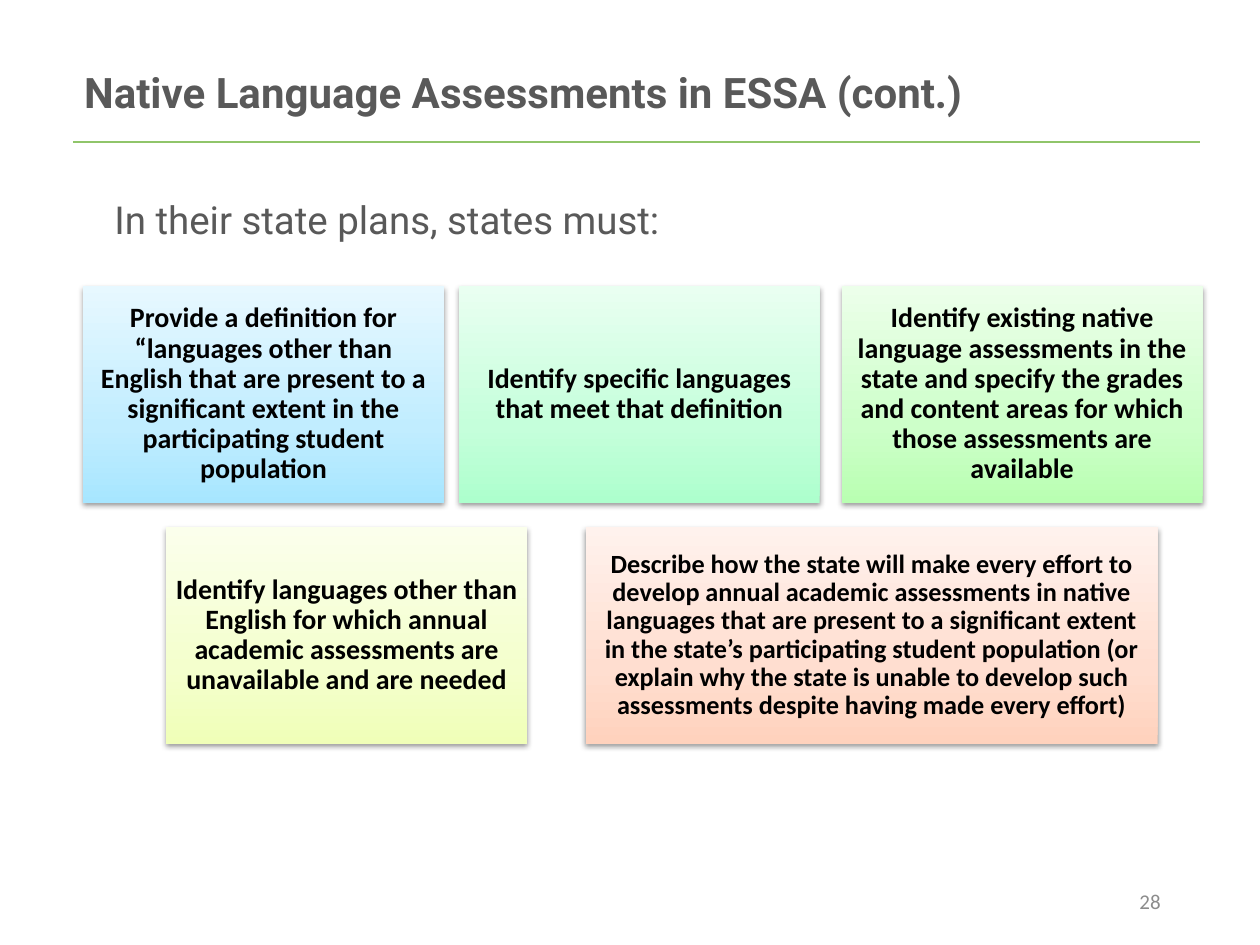
import copy

import lxml.etree
import pptx
import pptx.dml.color
import pptx.enum.dml
import pptx.enum.shapes
import pptx.enum.text
import pptx.oxml
import pptx.oxml.ns
import pptx.util

Pt = pptx.util.Pt
ALIGN = pptx.enum.text.PP_ALIGN
ANCHOR = pptx.enum.text.MSO_ANCHOR

COLOURS = {"heading": "595959", "body": "000000", "number": "8C8C8C", "rule": "90C56A"}

# Gradient stops of each card, from its bottom edge to its top edge
GRADIENTS = {
    "blue": ("A7E6FF", "C1EDFF", "E7F8FF"),
    "mint": ("ADFFCD", "C5FFDB", "E9FFF1"),
    "green": ("B9FFB2", "CDFFC9", "ECFFEA"),
    "yellow": ("F0FFB8", "F4FFCD", "FBFFEC"),
    "peach": ("FFD2BD", "FFDED0", "FFF2ED"),
}
STOPS = (0, 0.35, 1)

SHADOW = (
    '<a:outerShdw xmlns:a="http://schemas.openxmlformats.org/drawingml/2006/main" '
    'blurRad="40000" dist="20000" dir="5400000" rotWithShape="0">'
    '<a:srgbClr val="000000"><a:alpha val="38000"/></a:srgbClr></a:outerShdw>'
)


def rgb(value):
    return pptx.dml.color.RGBColor.from_string(value)


def write(frame, text, size, font="Calibri", colour="body", bold=False,
          align=ALIGN.LEFT, anchor=ANCHOR.TOP, inset=None, spacing=None):
    """Put one formatted paragraph into a text frame."""
    frame.word_wrap = True
    frame.vertical_anchor = anchor
    if inset is not None:
        frame.margin_left = frame.margin_right = Pt(inset)
        frame.margin_top = frame.margin_bottom = Pt(inset)
    para = frame.paragraphs[0]
    para.alignment = align
    if spacing:
        para.line_spacing = spacing
    span = para.add_run()
    span.text = text
    span.font.name = font
    span.font.size = Pt(size)
    span.font.bold = bold
    span.font.color.rgb = rgb(COLOURS[colour])


class Page:
    """The current slide and the style of its elements."""

    def __init__(self, deck):
        self.shapes = deck.slides.add_slide(deck.slide_layouts[6]).shapes

    def rule(self, left, right, top):
        line = self.shapes.add_connector(
            pptx.enum.shapes.MSO_CONNECTOR.STRAIGHT, Pt(left), Pt(top), Pt(right), Pt(top))
        line.line.color.rgb = rgb(COLOURS["rule"])
        line.line.width = Pt(1)
        lxml.etree.SubElement(line._element.spPr, pptx.oxml.ns.qn("a:effectLst"))

    def text(self, left, top, width, height, text, size, **style):
        box = self.shapes.add_textbox(Pt(left), Pt(top), Pt(width), Pt(height))
        write(box.text_frame, text, size, **style)

    def card(self, left, top, width, height, gradient, text, size, inset):
        box = self.shapes.add_shape(
            pptx.enum.shapes.MSO_SHAPE.RECTANGLE, Pt(left), Pt(top), Pt(width), Pt(height))
        box.line.fill.background()

        # Three-stop gradient running upwards
        box.fill.gradient()
        box.fill.gradient_angle = 90
        first = box.fill.gradient_stops[0]._gs
        first.addnext(copy.deepcopy(first))
        for stop, position, colour in zip(box.fill.gradient_stops, STOPS, GRADIENTS[gradient]):
            stop.position = position
            stop.color.rgb = rgb(colour)

        # Soft shadow below the card
        box.shadow.inherit = False
        effects = box._element.spPr.find(pptx.oxml.ns.qn("a:effectLst"))
        effects.append(pptx.oxml.parse_xml(SHADOW))

        write(box.text_frame, text, size, bold=True, align=ALIGN.CENTER,
              anchor=ANCHOR.MIDDLE, inset=inset, spacing=0.9)


def main():
    deck = pptx.Presentation()
    deck.slide_width, deck.slide_height = Pt(720), Pt(540)
    page = Page(deck)

    # Title and lead-in
    page.rule(42, 686, 81.25)
    page.text(41, 26.6, 671, 52, "Native Language Assessments in ESSA (cont.)", 24,
              font="Roboto", colour="heading", bold=True, anchor=ANCHOR.MIDDLE)
    page.text(58.3, 108.7, 614, 40, "In their state plans, states must:", 22,
              font="Roboto", colour="heading")

    # Requirement cards: left, width, gradient, text, size, inset
    height = 123.8
    rows = {
        163.4: [
            (47.5, 206.2, "blue", "Provide a definition for “languages other than English that are "
             "present to a significant extent in the participating student population", 16, 4.8),
            (262.3, 206.2, "mint", "Identify specific languages that meet that definition", 16, 4.8),
            (481, 206.2, "green", "Identify existing native language assessments in the state and "
             "specify the grades and content areas for which those assessments are available",
             16, 4.8),
        ],
        301.2: [
            (95, 206.2, "yellow", "Identify languages other than English for which annual academic "
             "assessments are unavailable and are needed", 16, 4.8),
            (334.6, 327, "peach", "Describe how the state will make every effort to develop annual "
             "academic assessments in native languages that are present to a significant extent in "
             "the state’s participating student population (or explain why the state is unable to "
             "develop such assessments despite having made every effort)", 15, 4.5),
        ],
    }
    for top, cards in rows.items():
        for left, width, *content in cards:
            page.card(left, top, width, height, *content)

    # Page number
    page.text(508.3, 500.5, 162, 28.8, "28", 12, colour="number",
              align=ALIGN.RIGHT, anchor=ANCHOR.MIDDLE)

    deck.save("out.pptx")


if __name__ == "__main__":
    main()
